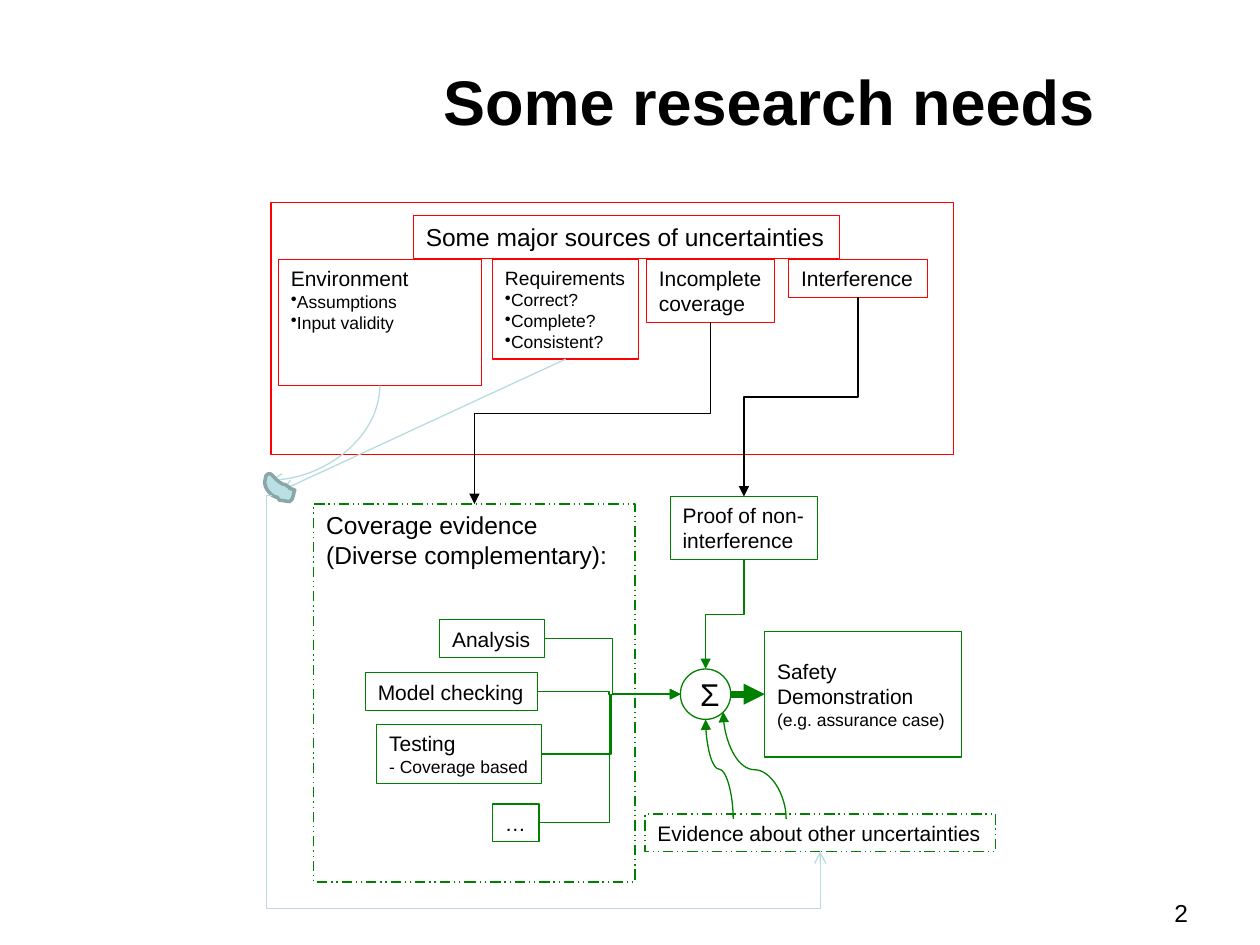
from pptx import Presentation
from pptx.dml.color import RGBColor
from pptx.enum.dml import MSO_LINE
from pptx.enum.shapes import MSO_CONNECTOR, MSO_SHAPE
from pptx.enum.text import MSO_ANCHOR, PP_ALIGN
from pptx.oxml.ns import qn
from pptx.util import Pt
from lxml import etree

RECT, OVAL = MSO_SHAPE.RECTANGLE, MSO_SHAPE.OVAL
STRAIGHT, ELBOW, CURVE = MSO_CONNECTOR.STRAIGHT, MSO_CONNECTOR.ELBOW, MSO_CONNECTOR.CURVE
TOP, MIDDLE = MSO_ANCHOR.TOP, MSO_ANCHOR.MIDDLE
LEFT, CENTER = PP_ALIGN.LEFT, PP_ALIGN.CENTER
DASHED = MSO_LINE.DASH_DOT_DOT
SIDE_TOP, SIDE_LEFT, SIDE_BOTTOM, SIDE_RIGHT = range(4)

FONT = "Arial"
BLACK, RED, GREEN = "000000", "FF0000", "008000"
PALE, AQUA, SLATE = "B6DCDF", "BBE0E3", "8AA6A8"
ROW = 21.6  # height of a one-line box


def color(value):
    return RGBColor.from_string(value)


def write(box, lines, size=12, anchor=MIDDLE, align=LEFT, bold=False, wrap=False):
    """Each line is a string or (string, size); a leading • becomes a bullet."""
    frame = box.text_frame
    frame.word_wrap = wrap
    frame.vertical_anchor = anchor
    for index, line in enumerate(lines):
        text, line_size = line if isinstance(line, tuple) else (line, size)
        para = frame.paragraphs[0] if index == 0 else frame.add_paragraph()
        if text.startswith("•"):
            props = para._p.get_or_add_pPr()
            props.set("marL", "0")
            props.set("indent", "0")
            etree.SubElement(props, qn("a:buChar")).set("char", "•")
        para.alignment = align
        span = para.add_run()
        span.text = text.lstrip("•")
        span.font.name = FONT
        span.font.size = Pt(line_size)
        span.font.bold = bold
        span.font.color.rgb = color(BLACK)


def add_label(page, left, top, width, height, lines, **text_format):
    box = page.shapes.add_textbox(Pt(left), Pt(top), Pt(width), Pt(height))
    write(box, lines, wrap=True, **text_format)


def add_box(page, left, top, width, height, line, lines=(), shape=RECT, dash=None, **text_format):
    box = page.shapes.add_shape(shape, Pt(left), Pt(top), Pt(width), Pt(height))
    box.shadow.inherit = False
    box.fill.background()
    box.line.color.rgb = color(line)
    box.line.width = Pt(0.75)
    if dash:
        box.line.dash_style = dash
    write(box, lines, **text_format)
    return box


def side(box, index):
    """Middle of one side of a box, in points."""
    left, top, width, height = box.left.pt, box.top.pt, box.width.pt, box.height.pt
    return [(left + width / 2, top), (left, top + height / 2),
            (left + width / 2, top + height), (left + width, top + height / 2)][index]


def link(page, kind, start, end, line, width=0.75, head="triangle",
         vertical=False, preset=None, adjust=()):
    """Connector with an arrowhead; a vertical one leaves its start up or down."""
    (x1, y1), (x2, y2) = start, end
    if vertical:  # lay the path out flat, then turn it a quarter
        mid_x, mid_y, dx, dy = (x1 + x2) / 2, (y1 + y2) / 2, x2 - x1, y2 - y1
        x1, x2 = mid_x - dy / 2, mid_x + dy / 2
        y1, y2 = mid_y + dx / 2, mid_y - dx / 2
    connector = page.shapes.add_connector(kind, Pt(x1), Pt(y1), Pt(x2), Pt(y2))
    connector.line.color.rgb = color(line)
    connector.line.width = Pt(width)
    props = connector._element.spPr
    if vertical:
        props.find(qn("a:xfrm")).set("rot", "5400000")
    geometry = props.find(qn("a:prstGeom"))
    if preset:
        geometry.set("prst", preset)
    guides = geometry.find(qn("a:avLst"))
    for number, share in enumerate(adjust, 1):
        guide = etree.SubElement(guides, qn("a:gd"))
        guide.set("name", f"adj{number}")
        guide.set("fmla", f"val {round(share * 100000)}")
    etree.SubElement(props.find(qn("a:ln")), qn("a:tailEnd")).set("type", head)
    etree.SubElement(props, qn("a:effectLst"))
    return connector


def draw_sources(page, left, top, width, height):
    add_box(page, left, top, width, height, RED)
    add_box(page, left + 81.4, top + 7.2, 243.4, 24.5, RED,
            ["Some major sources of uncertainties"], size=14)
    row = top + 32.4
    environment = add_box(page, left + 4.3, row, 115.9, 72, RED,
                          ["Environment", ("•Assumptions", 10), ("•Input validity", 10)],
                          anchor=TOP)
    requirements = add_box(page, left + 126.7, row, 83.5, 56.9, RED,
                           [("Requirements", 11), "•Correct?", "•Complete?", "•Consistent?"],
                           size=10)
    incomplete = add_box(page, left + 214.6, row, 73.4, 36, RED, ["Incomplete", "coverage"])
    interference = add_box(page, left + 295.9, row, 79.2, ROW, RED, ["Interference"])
    return environment, requirements, incomplete, interference


def draw_coverage(page, left, top, width, height):
    methods = [
        (72, 66.2, 59.8, ROW, ["Analysis"]),
        (29.5, 96.5, 98.6, ROW, ["Model checking"]),
        (36, 126, 94.3, 33.8, ["Testing", ("- Coverage based", 10)]),
        (102.2, 171.4, 26.6, ROW, ["…"]),
    ]
    panel = add_box(page, left, top, width, height, GREEN,
                    ["Coverage evidence", "(Diverse complementary):"],
                    dash=DASHED, size=14, anchor=TOP)
    return panel, [add_box(page, left + x, top + y, w, h, GREEN, lines)
                   for x, y, w, h, lines in methods]


def draw_synthesis(page, left, top, width, height):
    proof = add_box(page, left + 14.4, top, 84.2, 36, GREEN, ["Proof of non-", "interference"])
    total = add_box(page, left + 20.2, top + 98.6, 28.8, 28.8, GREEN, ["Σ"],
                    shape=OVAL, size=18)
    safety = add_box(page, left + 68.4, top + 77, 112.3, 72, GREEN,
                     ["Safety", "Demonstration", ("(e.g. assurance case)", 10)])
    evidence_top = top + height - ROW
    evidence = add_box(page, left, evidence_top, width, ROW, GREEN,
                       ["Evidence about other uncertainties"], dash=DASHED, anchor=TOP)

    link(page, ELBOW, side(proof, SIDE_BOTTOM), side(total, SIDE_TOP), GREEN, vertical=True)
    result = link(page, STRAIGHT, side(total, SIDE_RIGHT), side(safety, SIDE_LEFT), GREEN, width=4)
    result.end_connect(safety, SIDE_LEFT)
    link(page, CURVE, (left + 80.7, evidence_top + 2.9), (left + 44.7, top + 123.1),
         GREEN, vertical=True, adjust=[0.46])
    link(page, CURVE, (left + 50.4, evidence_top + 2.9), side(total, SIDE_BOTTOM),
         GREEN, vertical=True)
    return proof, total, evidence


def draw_collector(page, left, top):
    """Small blob: each curve is two control points and an end point."""
    start = (3.6, 2.2)
    curves = [
        ((5.8, 4.3), (7.2, 6.5), (10.1, 7.9)), ((10.8, 8.6), (11.5, 7.9), (12.2, 8.6)),
        ((18.7, 12.2), (9.4, 8.6), (17.3, 11.5)), ((16.6, 12.2), (16.6, 17.3), (14.4, 18)),
        ((12.2, 18), (10.8, 17.3), (8.6, 17.3)), ((4.3, 12.2), (10.1, 18), (4.3, 14.4)),
        ((3.6, 13.7), (2.9, 13), (2.2, 12.2)), ((0.7, 10.1), (0.7, 10.1), (0, 7.2)),
        ((0.7, 0), (2.9, 2.9), start),
    ]
    points, last = [], start
    for curve in curves:
        for t in (0.25, 0.5, 0.75, 1):
            u = 1 - t
            points.append(tuple(
                round(100 * (u**3 * a + 3 * u * u * t * b + 3 * u * t * t * c + t**3 * d))
                for a, b, c, d in zip(last, *curve)))
        last = curve[-1]
    builder = page.shapes.build_freeform(360, 220, scale=Pt(0.01))
    builder.add_line_segments(points, close=True)
    blob = builder.convert_to_shape(Pt(left), Pt(top))
    blob.shadow.inherit = False
    blob.fill.solid()
    blob.fill.fore_color.rgb = color(AQUA)
    blob.line.color.rgb = color(SLATE)
    blob.line.width = Pt(2)


def main():
    deck = Presentation()
    deck.slide_width, deck.slide_height = Pt(720), Pt(540)
    page = deck.slides.add_slide(deck.slide_layouts[6])

    # Title and slide number
    add_label(page, 246.2, 30.2, 426.2, 54, ["Some research needs"], size=36, bold=True)
    add_label(page, 649.4, 509.8, 51.1, 23.8, ["2"], size=14, anchor=TOP, align=CENTER)

    # Regions of the diagram
    environment, requirements, incomplete, interference = draw_sources(
        page, 154.8, 115.9, 390.2, 144)
    panel, methods = draw_coverage(page, 179.3, 288, 183.6, 216)
    proof, total, evidence = draw_synthesis(page, 368.6, 283.7, 200.2, 203)

    # Flows between regions
    for method in methods:
        link(page, ELBOW, side(method, SIDE_RIGHT), side(total, SIDE_LEFT), GREEN)
    for source, target in ((incomplete, panel), (interference, proof)):
        link(page, ELBOW, side(source, SIDE_BOTTOM), side(target, SIDE_TOP), BLACK, vertical=True)

    # Other uncertainties, gathered and fed to the evidence box
    link(page, CURVE, side(environment, SIDE_BOTTOM), (154.8, 274.3), PALE,
         head="arrow", vertical=True, preset="curvedConnector2")
    gather = link(page, STRAIGHT, side(requirements, SIDE_BOTTOM), (161.3, 280.1), PALE,
                  head="arrow")
    gather.begin_connect(requirements, SIDE_BOTTOM)
    draw_collector(page, 151.2, 268.6)
    link(page, ELBOW, (155.5, 283), side(evidence, SIDE_BOTTOM), PALE,
         head="arrow", preset="bentConnector4", adjust=[-0.01, 1.16])

    deck.save("out.pptx")


if __name__ == "__main__":
    main()
